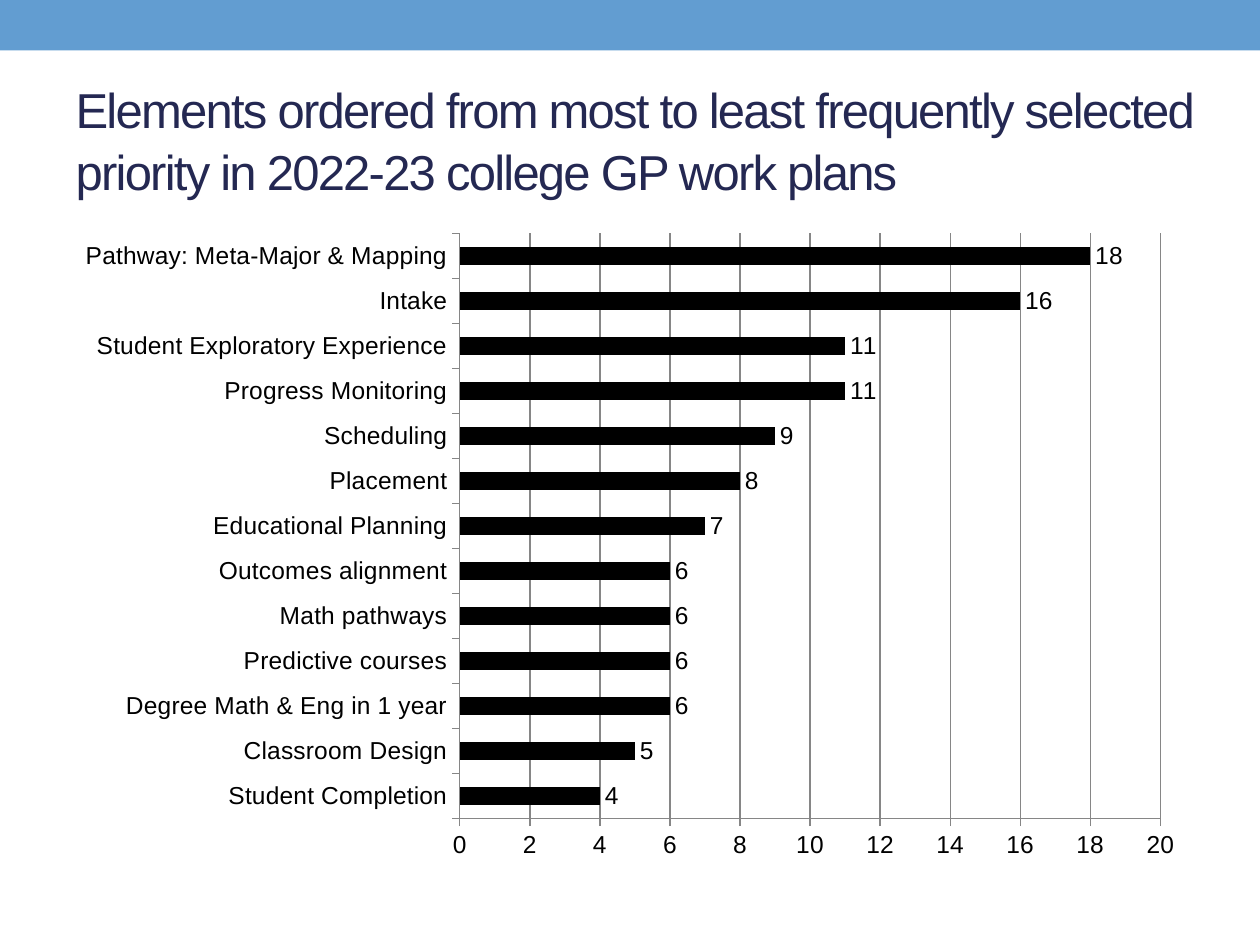
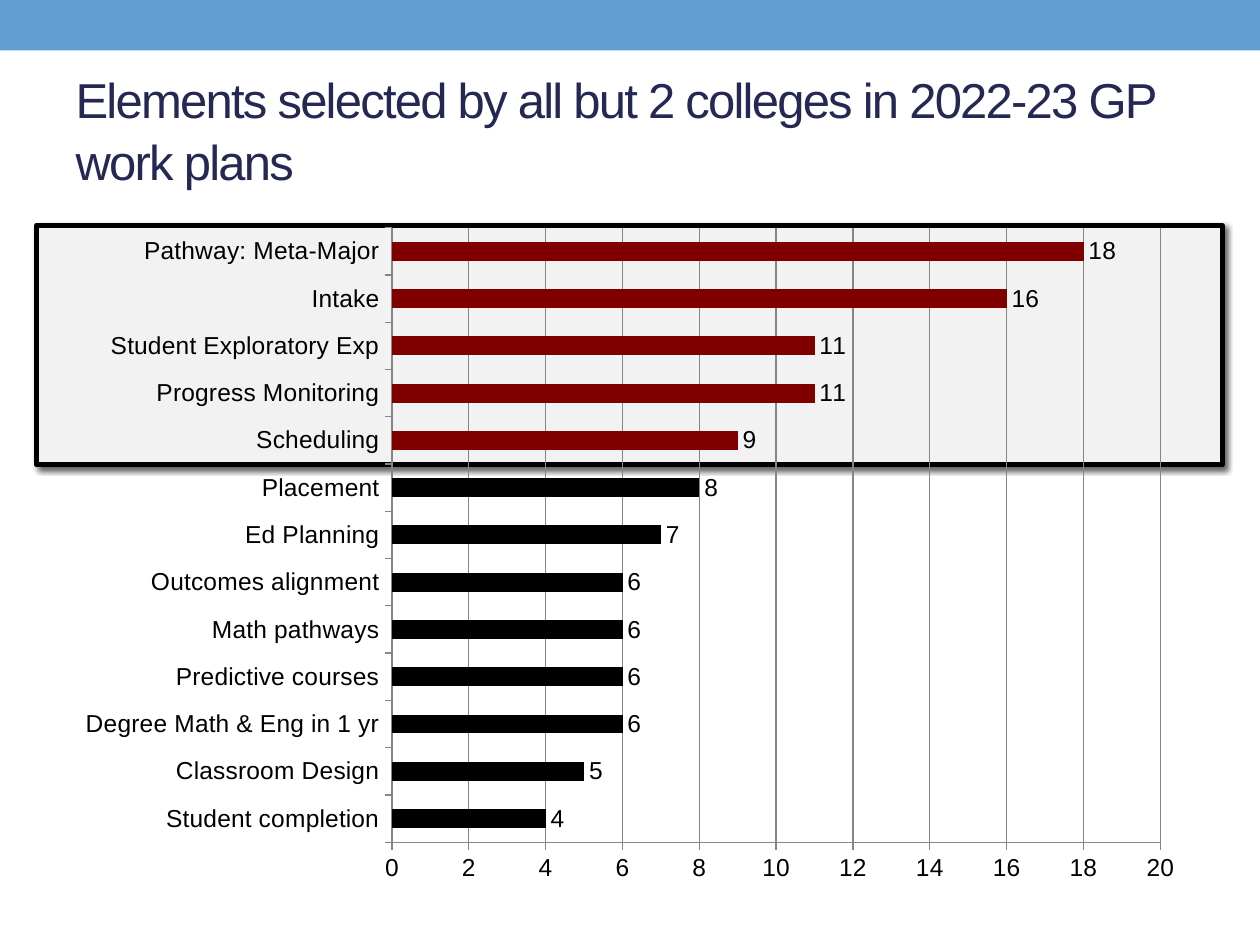
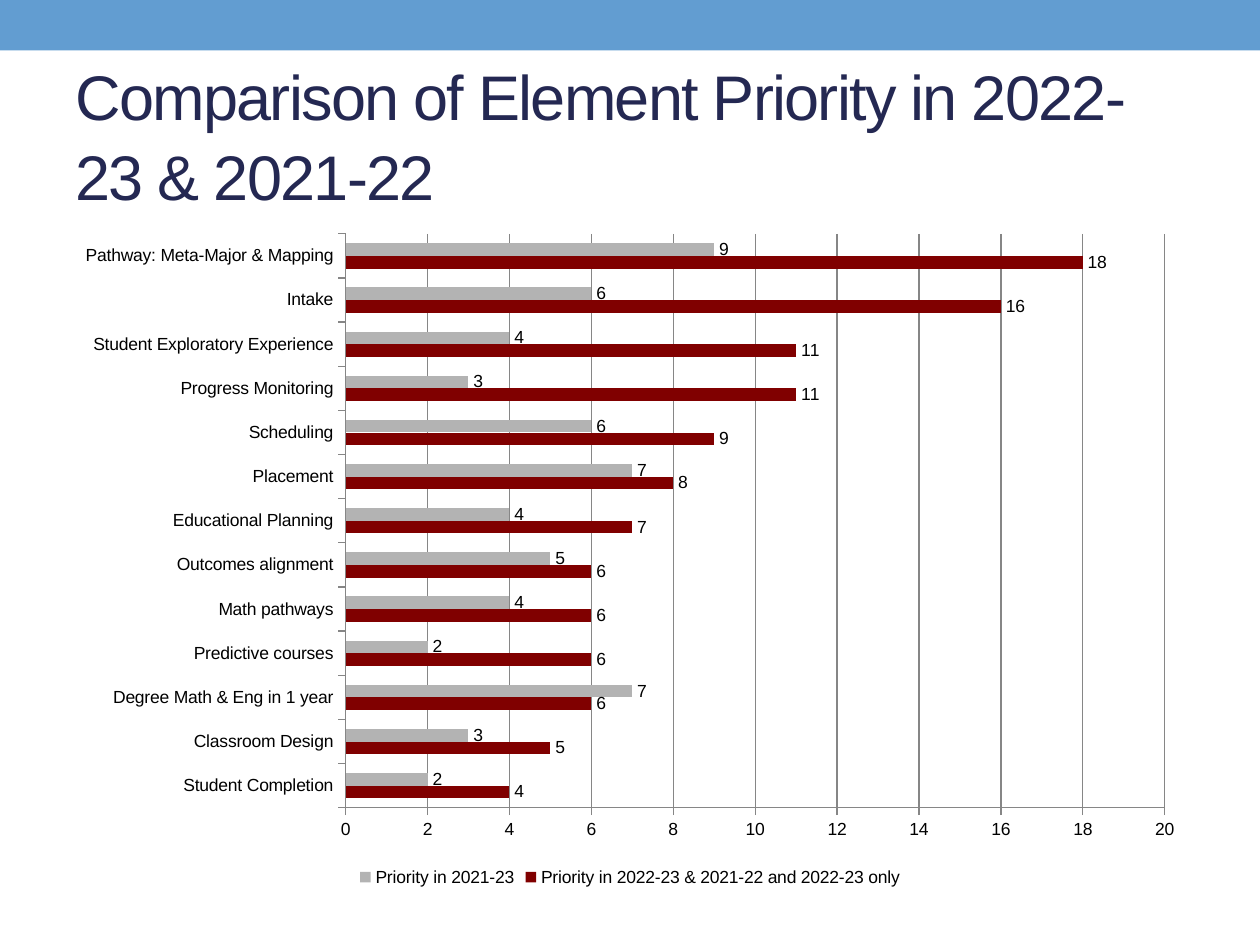
from dataclasses import dataclass

from lxml.etree import SubElement
from pptx import Presentation
from pptx.chart.data import CategoryChartData
from pptx.dml.color import RGBColor
from pptx.enum.chart import XL_CHART_TYPE as ChartType
from pptx.enum.chart import XL_LABEL_POSITION as LabelPosition
from pptx.enum.chart import XL_LEGEND_POSITION as LegendPosition
from pptx.enum.chart import XL_TICK_MARK as TickMark
from pptx.enum.shapes import MSO_SHAPE as Shape
from pptx.enum.text import MSO_ANCHOR as Anchor
from pptx.enum.text import MSO_AUTO_SIZE as AutoSize
from pptx.enum.text import PP_ALIGN as Align
from pptx.oxml.ns import qn
from pptx.util import Pt


@dataclass(frozen=True)
class Theme:
    font: str = "Arial"
    band: RGBColor = RGBColor.from_string("629DD1")
    title: RGBColor = RGBColor.from_string("242852")
    ink: RGBColor = RGBColor.from_string("000000")
    accent: RGBColor = RGBColor.from_string("800000")
    earlier: RGBColor = RGBColor.from_string("B3B3B3")
    grid: RGBColor = RGBColor.from_string("868686")
    panel: RGBColor = RGBColor.from_string("F2F2F2")
    title_size: int = 28
    large_title_size: int = 36
    chart_size: int = 14
    small_chart_size: int = 10


theme = Theme()

elements = [
    "Student Completion", "Classroom Design", "Degree Math & Eng in 1 year",
    "Predictive courses", "Math pathways", "Outcomes alignment",
    "Educational Planning", "Placement", "Scheduling", "Progress Monitoring",
    "Student Exploratory Experience", "Intake", "Pathway: Meta-Major & Mapping",
]
short_names = {
    "Student Completion": "Student completion",
    "Degree Math & Eng in 1 year": "Degree Math & Eng in 1 yr",
    "Educational Planning": "Ed Planning",
    "Student Exploratory Experience": "Student Exploratory Exp",
    "Pathway: Meta-Major & Mapping": "Pathway: Meta-Major",
}
priority_2022 = [4, 5, 6, 6, 6, 6, 7, 8, 9, 11, 11, 16, 18]
priority_2021 = [2, 3, 7, 2, 4, 5, 4, 7, 6, 3, 4, 6, 9]
top_elements = range(8, 13)

# Boxes are left, top, width, height; series are name, values, colour.
pages = [
    dict(
        title="Elements ordered from most to least frequently selected "
              "priority in 2022-23 college GP work plans",
        title_box=(36, 40.3, 659.5, 77.8), title_size=theme.title_size,
        chart_box=(36, 126, 648, 372.2), chart_size=theme.chart_size,
        categories=elements,
        series=[("Series 1", priority_2022, theme.ink)],
    ),
    dict(
        title="Elements selected by all but 2 colleges in 2022-23 GP work plans",
        title_box=(36, 34.6, 662.4, 77.8), title_size=theme.title_size,
        chart_box=(36, 122.4, 648, 389.5), chart_size=theme.chart_size,
        categories=[short_names.get(name, name) for name in elements],
        series=[("Series 1", priority_2022, theme.ink)],
        highlight_box=(20.9, 128.9, 677.5, 136.8),
    ),
    dict(
        title="Comparison of Element Priority in 2022-23 & 2021-22",
        title_box=(36, 37.4, 648, 77.8), title_size=theme.large_title_size,
        chart_box=(36, 126, 648, 383.8), chart_size=theme.small_chart_size,
        categories=elements,
        series=[
            ("Priority in 2022-23 & 2021-22 and 2022-23 only",
             priority_2022, theme.accent),
            ("Priority in 2021-23", priority_2021, theme.earlier),
        ],
    ),
]


def add_box(page, box, fill):
    shape = page.shapes.add_shape(Shape.RECTANGLE, *map(Pt, box))
    shape.fill.solid()
    shape.fill.fore_color.rgb = fill
    shape.line.fill.background()
    shape.shadow.inherit = False
    return shape


def style_font(font, size, color):
    font.name = theme.font
    font.size = Pt(size)
    font.color.rgb = color


deck = Presentation()
deck.slide_width, deck.slide_height = Pt(720), Pt(540)
title_only = deck.slide_layouts.get_by_name("Title Only")

for number, content in enumerate(pages):
    page = deck.slides.add_slide(title_only)

    # The band is drawn once and moved to the master, behind everything.
    if number == 0:
        band = add_box(page, (0, 0, 720, 28.8), theme.band)
        deck.slide_master.shapes.element.insert(2, band.element)

    if "highlight_box" in content:
        panel = add_box(page, content["highlight_box"], theme.panel)
        panel.line.color.rgb = theme.ink
        panel.line.width = Pt(3)
        effects = panel.element.spPr.find(qn("a:effectLst"))
        shadow = SubElement(effects, qn("a:outerShdw"), blurRad=str(Pt(3)),
                            dist=str(Pt(2)), dir="2700000", rotWithShape="0")
        shade = SubElement(shadow, qn("a:srgbClr"), val=str(theme.ink))
        SubElement(shade, qn("a:alpha"), val="60000")

    title = page.shapes.title
    title.left, title.top, title.width, title.height = map(Pt, content["title_box"])
    frame = title.text_frame
    frame.text = content["title"]
    frame.word_wrap = True
    frame.auto_size = AutoSize.NONE
    frame.vertical_anchor = Anchor.MIDDLE
    para = frame.paragraphs[0]
    para.alignment = Align.LEFT
    para.line_spacing = 1.05
    span = para.runs[0]
    style_font(span.font, content["title_size"], theme.title)
    span.font._element.set("spc", "-100")

    data = CategoryChartData()
    data.categories = content["categories"]
    for name, values, _ in content["series"]:
        data.add_series(name, values)
    chart = page.shapes.add_chart(
        ChartType.BAR_CLUSTERED, *map(Pt, content["chart_box"]), data).chart
    style_font(chart.font, content["chart_size"], theme.ink)
    chart.has_title = False
    chart.has_legend = len(content["series"]) > 1
    if chart.has_legend:
        chart.legend.position = LegendPosition.BOTTOM
        chart.legend.include_in_layout = False

    values_axis = chart.value_axis
    values_axis.minimum_scale, values_axis.maximum_scale = 0, 20
    values_axis.major_unit = 2
    values_axis.has_major_gridlines = True
    chart.category_axis.has_major_gridlines = False
    for axis in (values_axis, chart.category_axis):
        axis.major_tick_mark = TickMark.OUTSIDE
        axis.minor_tick_mark = TickMark.NONE
    for part in (values_axis, chart.category_axis, values_axis.major_gridlines):
        part.format.line.color.rgb = theme.grid
        part.format.line.width = Pt(0.75)

    plot = chart.plots[0]
    plot.gap_width = 150
    plot.vary_by_categories = False
    for series, (_, _, color) in zip(plot.series, content["series"]):
        series.invert_if_negative = False
        series.format.fill.solid()
        series.format.fill.fore_color.rgb = color
        labels = series.data_labels
        labels.show_value = True
        labels.position = LabelPosition.OUTSIDE_END
        style_font(labels.font, content["chart_size"], theme.ink)

    if "highlight_box" in content:
        for index in top_elements:
            fill = plot.series[0].points[index].format.fill
            fill.solid()
            fill.fore_color.rgb = theme.accent

deck.save("out.pptx")
